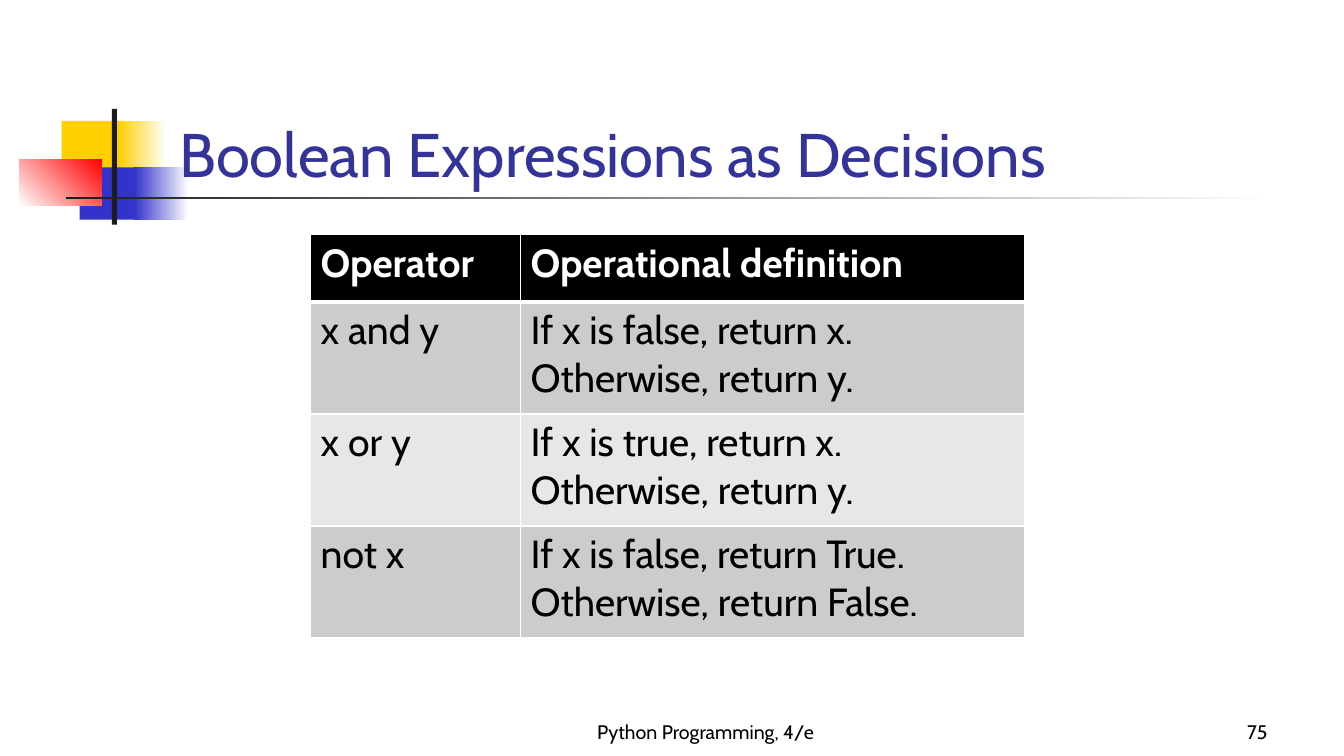
from dataclasses import dataclass
from lxml.etree import SubElement
from pptx import Presentation
from pptx.dml.color import RGBColor
from pptx.enum.shapes import MSO_SHAPE
from pptx.enum.text import MSO_ANCHOR, PP_ALIGN
from pptx.oxml.ns import qn
from pptx.util import Inches, Pt


@dataclass(frozen=True)
class Theme:
    font: str = "Cabin"
    title_size: int = 44
    table_size: int = 28
    footer_size: int = 14
    title: str = "333399"
    ink: str = "000000"
    paper: str = "FFFFFF"
    bar: str = "1C1C1C"
    yellow: str = "FFCF01"
    blue: str = "3333CC"
    red: str = "FF0000"
    bands: tuple = ("CCCCCC", "E7E7E7")


@dataclass(frozen=True)
class Box:
    left: float
    top: float
    width: float
    height: float

    def inner(self, left, top, width, height):
        """Return an inner box given in percent of this one."""
        return Box(self.left + self.width * left / 100,
                   self.top + self.height * top / 100,
                   self.width * width / 100, self.height * height / 100)

    def place(self):
        return [Inches(v) for v in (self.left, self.top, self.width, self.height)]


THEME = Theme()
SLIDE = Box(0, 0, 13.33, 7.5)
ROWS = [
    ("Operator", "Operational definition"),
    ("x and y", "If x is false, return x. Otherwise, return y."),
    ("x or y", "If x is true, return x. Otherwise, return y."),
    ("not x", "If x is false, return True. Otherwise, return False."),
]
COLUMN_SHARES = (5, 12)
ROW_SHARES = (3, 5, 5, 5)


def rgb(code):
    return RGBColor.from_string(code)


def style_text(frame, size, color, bold=False, align=PP_ALIGN.LEFT):
    for para in frame.paragraphs:
        para.alignment = align
        for span in para.runs:
            span.font.name = THEME.font
            span.font.size = Pt(size)
            span.font.bold = bold
            span.font.color.rgb = rgb(color)


def add_text(page, box, text, size, color, align=PP_ALIGN.LEFT):
    frame = page.shapes.add_textbox(*box.place()).text_frame
    frame.word_wrap = True
    frame.vertical_anchor = MSO_ANCHOR.BOTTOM
    frame.text = text
    style_text(frame, size, color, align=align)


def add_block(page, box, start, end=None, angle=0):
    block = page.shapes.add_shape(MSO_SHAPE.RECTANGLE, *box.place())
    block.shadow.inherit = False
    block.line.fill.background()
    if end is None:
        block.fill.solid()
        block.fill.fore_color.rgb = rgb(start)
        return
    block.fill.gradient()
    block.fill.gradient_angle = angle
    for stop, color in zip(block.fill.gradient_stops, (start, end)):
        stop.color.rgb = rgb(color)


def add_accent(page, box):
    # Yellow and blue bands, each a solid block fading to white
    for color, top, solid, fade in (
        (THEME.yellow, 10.43, (25, 38.1), (58.33, 28.57)),
        (THEME.blue, 50.43, (35.71, 36.9), (67.86, 32.14)),
    ):
        add_block(page, box.inner(solid[0], top, solid[1], 45.22), color)
        add_block(page, box.inner(fade[0], top, fade[1], 45.22), color, THEME.paper)
    # Red block and upright bar
    add_block(page, box.inner(0, 43.48, 48.81, 40), THEME.paper, THEME.red, 45)
    add_block(page, box.inner(54.76, 0, 2.98, 100), THEME.bar)


def add_header(page, box):
    add_accent(page, box.inner(1.43, 14.4, 12.6, 15.33))
    add_block(page, box.inner(4.88, 26, 90, 0.4), THEME.bar, THEME.paper)
    add_text(page, box.inner(12.6, 9.07, 85.2, 16.67),
             "Boolean Expressions as Decisions", THEME.title_size, THEME.title)


def set_borders(cell, bottom_width):
    properties = cell._tc.get_or_add_tcPr()
    widths = {"a:lnL": 1, "a:lnR": 1, "a:lnT": 1, "a:lnB": bottom_width}
    for tag, width in widths.items():
        line = SubElement(properties, qn(tag), w=str(Pt(width)))
        fill = SubElement(line, qn("a:solidFill"))
        SubElement(fill, qn("a:srgbClr"), val=THEME.paper)


def add_operator_table(page, box):
    table = page.shapes.add_table(
        len(ROWS), len(COLUMN_SHARES), *box.place()).table
    for column, share in zip(table.columns, COLUMN_SHARES):
        column.width = Inches(box.width * share / sum(COLUMN_SHARES))
    for row, share in zip(table.rows, ROW_SHARES):
        row.height = Inches(box.height * share / sum(ROW_SHARES))
    for i, texts in enumerate(ROWS):
        header = i == 0
        for j, text in enumerate(texts):
            cell = table.cell(i, j)
            cell.text_frame.text = text
            style_text(cell.text_frame, THEME.table_size,
                       THEME.paper if header else THEME.ink, bold=header)
            set_borders(cell, 3 if header else 1)
            cell.fill.solid()
            cell.fill.fore_color.rgb = rgb(
                THEME.ink if header else THEME.bands[(i - 1) % 2])


def add_footer(page, box):
    for text, left, width, align in (
        ("Python Programming, 4/e", 36.68, 31.65, PP_ALIGN.CENTER),
        ("75", 74.19, 20.86, PP_ALIGN.RIGHT),
    ):
        add_text(page, box.inner(left, 0, width, 100), text,
                 THEME.footer_size, THEME.ink, align)


def main():
    deck = Presentation()
    deck.slide_width, deck.slide_height = Inches(SLIDE.width), Inches(SLIDE.height)
    page = deck.slides.add_slide(deck.slide_layouts[6])
    add_header(page, SLIDE)
    add_footer(page, SLIDE.inner(0, 92.27, 100, 6.67))
    add_operator_table(page, SLIDE.inner(23.11, 31.07, 53.12, 53.33))
    deck.save("out.pptx")


if __name__ == "__main__":
    main()
